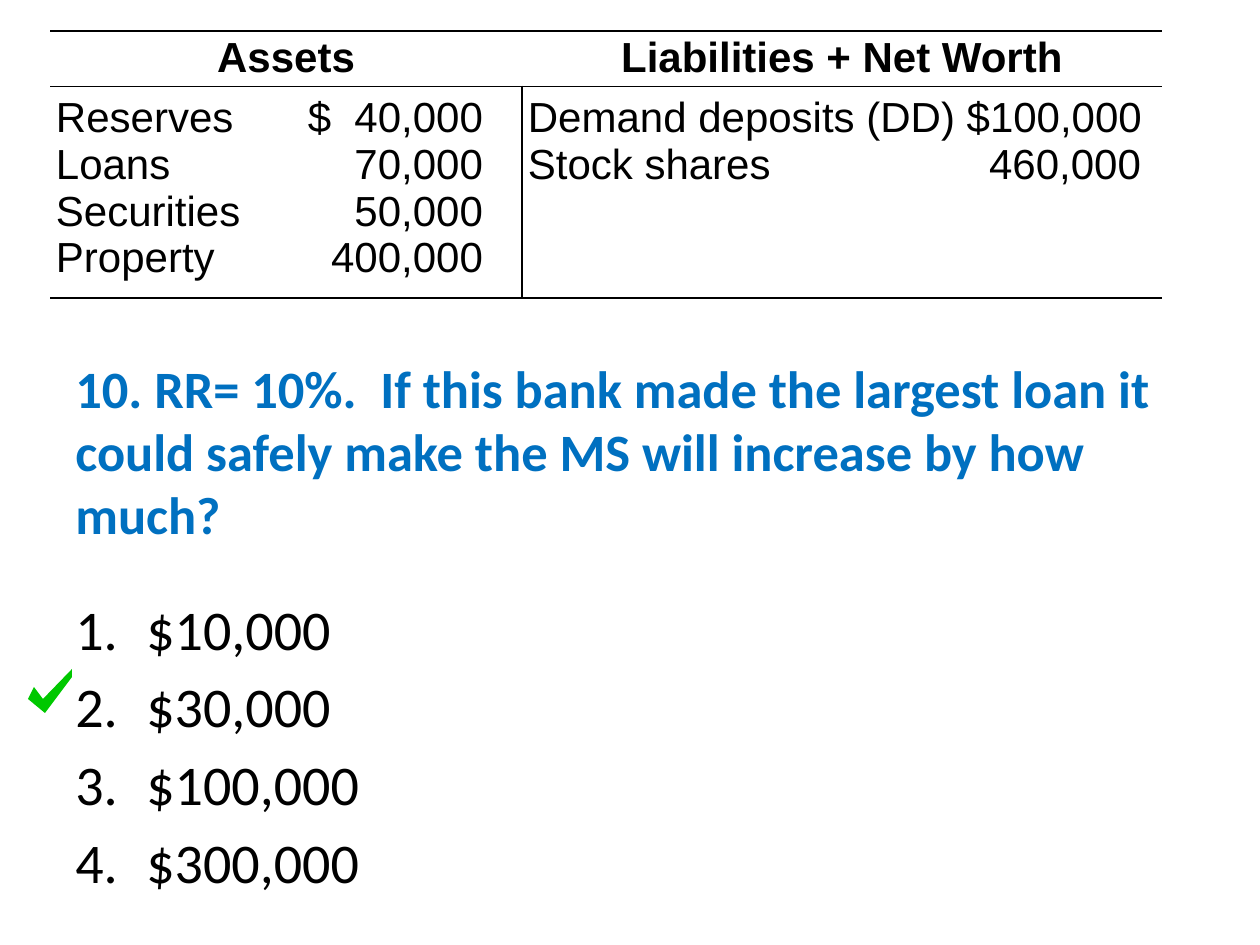
from lxml.etree import SubElement
from pptx import Presentation
from pptx.dml.color import RGBColor
from pptx.enum.text import MSO_ANCHOR, PP_ALIGN
from pptx.oxml import parse_xml
from pptx.oxml.ns import nsdecls, qn
from pptx.util import Pt

PX = 914400 / 126


def px(length):
    return round(length * PX)


def color(value):
    return RGBColor.from_string(value)


class SlideBuilder:
    black, blue, green = "000000", "0070C0", "00C800"
    table_font, text_font = "Arial", "Calibri"

    def __init__(self, slide):
        self.slide = slide

    def add_run(self, paragraph, text, size, font, fill=black, bold=False):
        run = paragraph.add_run()
        run.text = text
        run.font.size, run.font.name, run.font.bold = Pt(size), font, bold
        run.font.color.rgb = color(fill)

    def text_frame(self, left, top, width, height, anchor=MSO_ANCHOR.TOP):
        box = self.slide.shapes.add_textbox(px(left), px(top), px(width), px(height))
        box.text_frame.word_wrap = True
        box.text_frame.vertical_anchor = anchor
        return box.text_frame

    def question(self, text, *bounds):
        frame = self.text_frame(*bounds, anchor=MSO_ANCHOR.MIDDLE)
        self.add_run(frame.paragraphs[0], text, 30, self.text_font, self.blue, True)

    def numbered_list(self, items, *bounds, indent=71):
        frame = self.text_frame(*bounds)
        for index, item in enumerate(items):
            paragraph = frame.paragraphs[0] if index == 0 else frame.add_paragraph()
            paragraph.space_before = Pt(6)
            properties = paragraph._p.get_or_add_pPr()
            properties.set("marL", str(px(indent)))
            properties.set("indent", str(-px(indent)))
            SubElement(properties, qn("a:buFont"), typeface="+mj-lt")
            SubElement(properties, qn("a:buAutoNum"), type="arabicPeriod")
            self.add_run(paragraph, item, 32, self.text_font)

    def table(self, left, top, widths, heights):
        frame = self.slide.shapes.add_table(
            len(heights), len(widths), px(left), px(top),
            px(sum(widths)), px(sum(heights)))
        table = frame.table
        table.first_row = table.horz_banding = False
        for column, width in zip(table.columns, widths):
            column.width = px(width)
        for row, height in zip(table.rows, heights):
            row.height = px(height)
        return table

    def style_cell(self, cell, margins, sides):
        (cell.margin_left, cell.margin_top,
         cell.margin_right, cell.margin_bottom) = map(px, margins)
        cell.fill.background()
        properties = cell._tc.get_or_add_tcPr()
        for index, side in enumerate("LRTB"):
            fill = (f'<a:solidFill><a:srgbClr val="{self.black}"/></a:solidFill>'
                    if side in sides else "<a:noFill/>")
            properties.insert(index, parse_xml(
                f'<a:ln{side} {nsdecls("a")} w="{Pt(1)}">{fill}</a:ln{side}>'))

    def header_cell(self, cell, text):
        self.style_cell(cell, (0, 4, 0, 1), "TB")
        paragraph = cell.text_frame.paragraphs[0]
        paragraph.alignment = PP_ALIGN.CENTER
        self.add_run(paragraph, text, 24, self.table_font, bold=True)

    def entries_cell(self, cell, entries, amount_stop, sides):
        self.style_cell(cell, (6, 8, 0, 2), sides)
        for index, parts in enumerate(entries):
            paragraph = (cell.text_frame.paragraphs[0] if index == 0
                         else cell.text_frame.add_paragraph())
            # A separate currency sign gets its own stop before the amount
            stops = [(252, "l")] if len(parts) == 3 else []
            stops.append((amount_stop, "r"))
            tabs = SubElement(paragraph._p.get_or_add_pPr(), qn("a:tabLst"))
            for position, alignment in stops:
                SubElement(tabs, qn("a:tab"), pos=str(px(position)), algn=alignment)
            self.add_run(paragraph, "\t".join(parts), 24, self.table_font)

    def polygon(self, points, fill):
        builder = self.slide.shapes.build_freeform(*points[0], scale=PX)
        builder.add_line_segments(points[1:], close=True)
        shape = builder.convert_to_shape()
        shape.shadow.inherit = False
        shape.fill.solid()
        shape.fill.fore_color.rgb = color(fill)
        shape.line.fill.background()


def main():
    presentation = Presentation()
    presentation.slide_width, presentation.slide_height = px(1260), px(945)
    slide = presentation.slides.add_slide(presentation.slide_layouts[6])
    builder = SlideBuilder(slide)

    # Question
    builder.question(
        "10. RR= 10%.  If this bank made the largest loan it could safely "
        "make the MS will increase by how much?", 63, 325, 1134, 252)

    # Balance sheet
    sheet = builder.table(50, 31, (472, 640), (52, 197))
    for column, heading in enumerate(("Assets", "Liabilities + Net Worth")):
        builder.header_cell(sheet.cell(0, column), heading)
    assets = [("Reserves", "$", "40,000"), ("Loans", "70,000"),
              ("Securities", "50,000"), ("Property", "400,000")]
    liabilities = [("Demand deposits (DD) $100,000",), ("Stock shares", "460,000")]
    builder.entries_cell(sheet.cell(1, 0), assets, 427, "RTB")
    builder.entries_cell(sheet.cell(1, 1), liabilities, 613, "LTB")

    # Answers
    builder.numbered_list(("$10,000", "$30,000", "$100,000", "$300,000"),
                          63, 588, 746, 315)

    # Check mark beside the right answer
    builder.polygon([(34, 687), (28, 699), (45, 713), (72, 677), (72, 669), (43, 699)],
                    builder.green)

    presentation.save("out.pptx")


if __name__ == "__main__":
    main()
